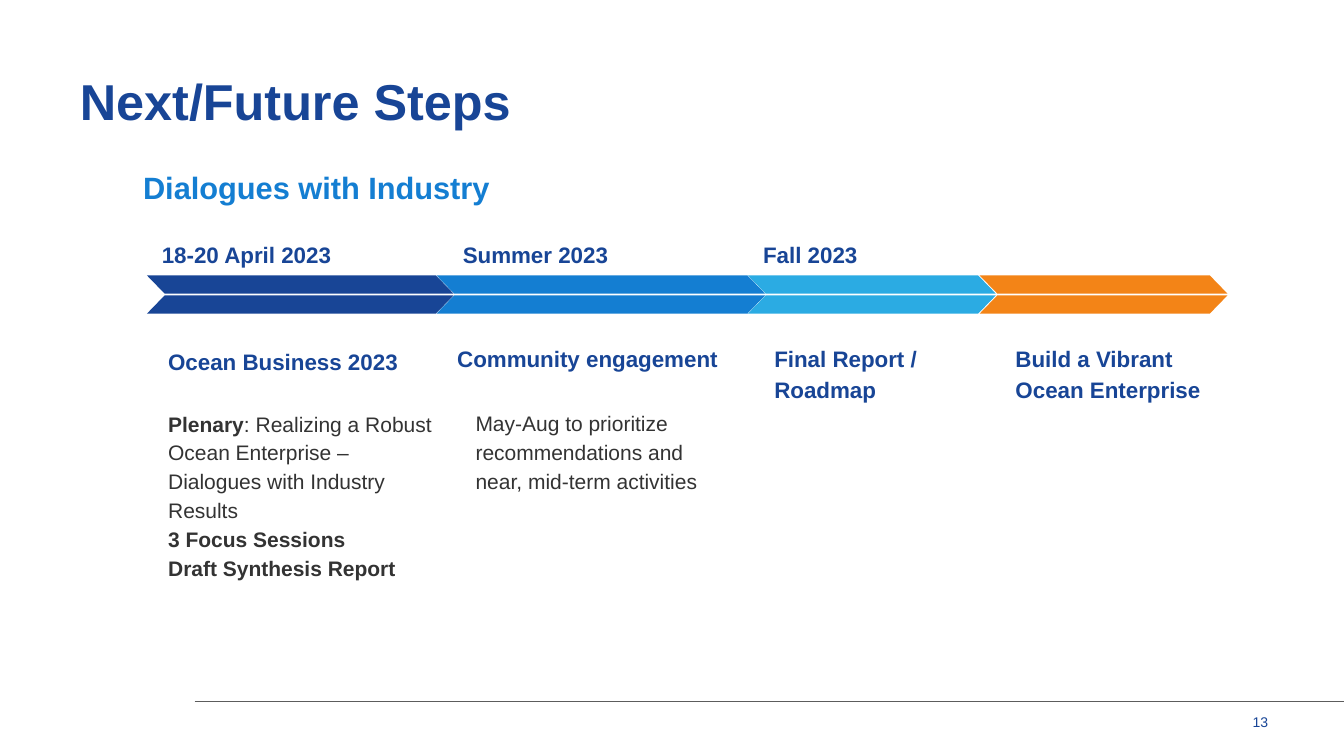
from dataclasses import dataclass

from lxml.etree import SubElement
from pptx import Presentation
from pptx.dml.color import RGBColor as Rgb
from pptx.enum.shapes import MSO_CONNECTOR as Connector, MSO_SHAPE as Preset
from pptx.enum.text import MSO_ANCHOR as Anchor, MSO_AUTO_SIZE as AutoSize, PP_ALIGN as Align
from pptx.oxml.ns import qn
from pptx.slide import Slide
from pptx.text.text import TextFrame
from pptx.util import Pt

COLORS = {
    "navy": "184596",
    "blue": "147ED2",
    "sky": "2BABE3",
    "orange": "F38417",
    "body": "333333",
    "rule": "5C5C5C",
}
FONT = "Arial"
BAND_TOPS = (196.7, 211)
BAND_HEIGHT = 13
BAND_SLANT = 0.97


@dataclass(frozen=True)
class Span:
    text: str
    bold: bool = False


@dataclass(frozen=True)
class Style:
    size: float
    color: str
    spacing: float = 1.15
    align: Align = Align.LEFT
    anchor: Anchor = Anchor.TOP
    inset: tuple[float, float] = (7.2, 7.2)


@dataclass(frozen=True)
class Label:
    left: float
    top: float
    width: float
    height: float
    style: Style
    lines: tuple[tuple[Span, ...], ...]


@dataclass(frozen=True)
class Phase:
    left: float
    width: float
    color: str


TITLE = Style(36, "navy", 0.85, inset=(0, 0))
SUBTITLE = Style(22, "blue", 0.9, anchor=Anchor.MIDDLE, inset=(5, 3))
NUMBER = Style(10, "navy", 0.9, Align.RIGHT, inset=(0, 0))
DATE = Style(16, "navy")
HEADING = Style(16, "navy", anchor=Anchor.BOTTOM)
DETAIL = Style(15, "body")


def bold(text: str) -> tuple[Span, ...]:
    """Return a line made of one bold span."""
    return (Span(text, True),)


PHASES = (
    Phase(105, 219, "navy"),
    Phase(311.8, 234.7, "blue"),
    Phase(534.3, 177, "sky"),
    Phase(699.8, 177, "orange"),
)
LABELS = (
    Label(885.6, 511.2, 20.2, 15, NUMBER, ((Span("13"),),)),
    Label(97.2, 113, 536.4, 44.6, SUBTITLE, (bold("Dialogues with Industry"),)),
    Label(108.5, 162, 170.6, 35.3, DATE, (bold("18-20 April 2023"),)),
    Label(323.5, 162, 154, 35.3, DATE, (bold("Summer 2023"),)),
    Label(538, 162, 131.8, 35.3, DATE, (bold("Fall 2023"),)),
    Label(113, 239.8, 203, 35.3, HEADING, (bold("Ocean Business 2023"),)),
    Label(319.5, 227.5, 219, 45.4, HEADING, (bold("Community engagement"),)),
    Label(546, 238.3, 164, 56.9, HEADING, (bold("Final Report / Roadmap"),)),
    Label(718.3, 238.3, 158.4, 56.9, HEADING, (bold("Build a Vibrant Ocean Enterprise"),)),
    Label(113, 283.7, 203, 107.3, DETAIL, (
        (
            Span("Plenary", True),
            Span(": Realizing a Robust Ocean Enterprise – Dialogues with Industry Results"),
        ),
        bold("3 Focus Sessions"),
        bold("Draft Synthesis Report"),
    )),
    Label(332.6, 283.7, 193, 83.5, DETAIL, (
        (Span("May-Aug to prioritize recommendations and near, mid-term activities"),),
    )),
)


def fill_frame(frame: TextFrame, style: Style, lines: tuple[tuple[Span, ...], ...]) -> None:
    """Write the lines into a text frame in the given style."""
    frame.word_wrap = True
    frame.auto_size = AutoSize.NONE
    frame.vertical_anchor = style.anchor
    side, edge = style.inset
    frame.margin_left = frame.margin_right = Pt(side)
    frame.margin_top = frame.margin_bottom = Pt(edge)
    for index, spans in enumerate(lines):
        para = frame.add_paragraph() if index else frame.paragraphs[0]
        para.alignment = style.align
        para.line_spacing = style.spacing
        para.font.name = FONT
        para.font.size = Pt(style.size)
        para.font.color.rgb = Rgb.from_string(COLORS[style.color])
        uniform = len({span.bold for span in spans}) == 1
        if uniform:
            para.font.bold = spans[0].bold
        for span in spans:
            run = para.add_run()
            run.text = span.text
            if not uniform:
                run.font.bold = span.bold


def add_title(page: Slide, text: str) -> None:
    """Place and format the title placeholder."""
    title = page.shapes.title
    title.left, title.top, title.width, title.height = Pt(57), Pt(57), Pt(847), Pt(45)
    fill_frame(title.text_frame, TITLE, (bold(text),))


def add_label(page: Slide, label: Label) -> None:
    """Add one text box."""
    box = page.shapes.add_textbox(
        Pt(label.left), Pt(label.top), Pt(label.width), Pt(label.height)
    )
    fill_frame(box.text_frame, label.style, label.lines)


def add_phase(page: Slide, phase: Phase) -> None:
    """Add the two mirrored halves of one timeline arrow."""
    for top, mirrored in zip(BAND_TOPS, (True, False)):
        half = page.shapes.add_shape(
            Preset.PARALLELOGRAM, Pt(phase.left), Pt(top), Pt(phase.width), Pt(BAND_HEIGHT)
        )
        half.adjustments[0] = BAND_SLANT
        half.shadow.inherit = False
        half.fill.solid()
        half.fill.fore_color.rgb = Rgb.from_string(COLORS[phase.color])
        half.line.fill.background()
        if mirrored:
            half._element.spPr.find(qn("a:xfrm")).set("flipH", "1")


def add_rule(page: Slide) -> None:
    """Add the thin line above the page number."""
    rule = page.shapes.add_connector(Connector.STRAIGHT, Pt(139), Pt(501), Pt(960), Pt(501))
    rule.line.color.rgb = Rgb.from_string(COLORS["rule"])
    rule.line.width = Pt(0.75)
    SubElement(rule._element.spPr, qn("a:effectLst"))


def main() -> None:
    """Build the slide and save the deck."""
    deck = Presentation()
    deck.slide_width, deck.slide_height = Pt(960), Pt(540)
    page = deck.slides.add_slide(deck.slide_layouts.get_by_name("Title Only"))
    add_rule(page)
    add_title(page, "Next/Future Steps")
    for phase in PHASES:
        add_phase(page, phase)
    for label in LABELS:
        add_label(page, label)
    deck.save("out.pptx")


if __name__ == "__main__":
    main()
